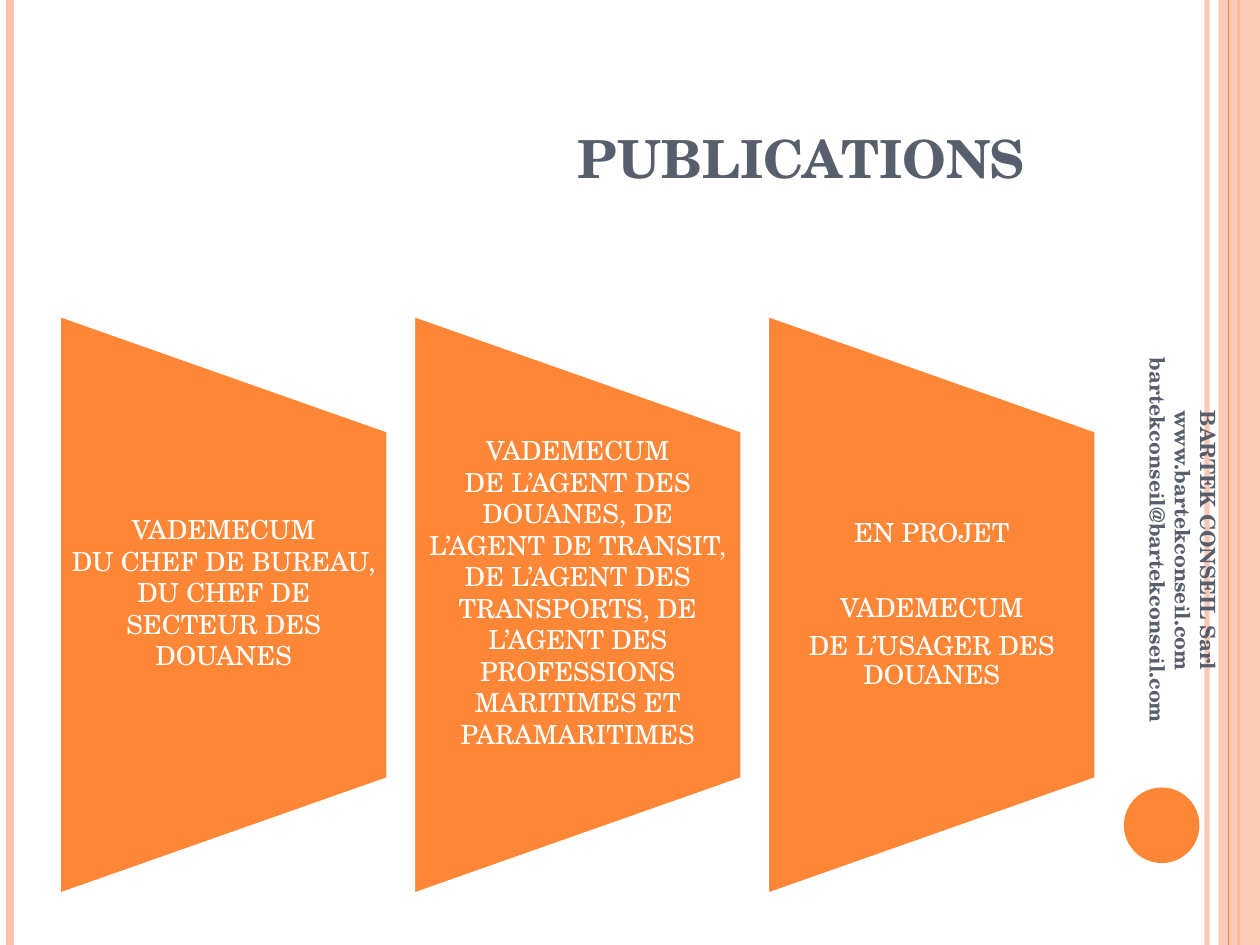
from pptx import Presentation
from pptx.dml.color import RGBColor
from pptx.enum.shapes import MSO_CONNECTOR as Connector, MSO_SHAPE as Shape
from pptx.enum.text import MSO_ANCHOR as Anchor, PP_ALIGN as Align
from pptx.oxml.ns import qn
from pptx.util import Inches, Pt
from lxml.etree import SubElement

FONT = "TeX Gyre Schola"
COLORS = {"orange": "FE8637", "peach": "FEC3AE", "slate": "575F6D", "white": "FFFFFF"}
SLIDE_HEIGHT = 7.5

# Columns: width, step between left edges, vertical middle
COLUMN_LEFT, COLUMN_WIDTH, COLUMN_STEP = 0.47, 2.61, 2.81
COLUMN_MIDDLE, COLUMN_HEIGHT, LABEL_HEIGHT = 4.8, 4.6, 2.76

# Each column: paragraphs as (text, space after in points), line spacing, bottom inset
COLUMNS = [
    ([("VADEMECUM", 0),
      ("DU CHEF DE BUREAU, DU CHEF DE SECTEUR DES DOUANES", 0)], 1, 0.2),
    ([("VADEMECUM", 0),
      ("DE L’AGENT DES DOUANES, DE L’AGENT DE TRANSIT, DE L’AGENT DES TRANSPORTS, "
       "DE L’AGENT DES PROFESSIONS MARITIMES ET PARAMARITIMES", 0)], 1, 0.2),
    ([("EN PROJET", 27), ("VADEMECUM", 5.5), ("DE L’USAGER DES DOUANES", 0)], 0.9, 0),
]


def rgb(name):
    return RGBColor.from_string(COLORS[name])


def set_alpha(element, percent):
    """Make the solid colour inside the element partly transparent."""
    color = element.find(".//" + qn("a:srgbClr"))
    SubElement(color, qn("a:alpha"), val=str(percent * 1000))


def add_rule(slide, x, color, width, alpha=100):
    """Draw a vertical line over the full slide height."""
    rule = slide.shapes.add_connector(
        Connector.STRAIGHT, Inches(x), 0, Inches(x), Inches(SLIDE_HEIGHT))
    rule.line.color.rgb = rgb(color)
    rule.line.width = Pt(width)
    properties = rule._element.spPr
    if alpha < 100:
        set_alpha(properties, alpha)
    SubElement(properties, qn("a:effectLst"))


def add_block(slide, kind, box, color, outline=None, rotation=0, alpha=100):
    shape = slide.shapes.add_shape(kind, *map(Inches, box))
    shape.shadow.inherit = False
    shape.rotation = rotation
    shape.fill.solid()
    shape.fill.fore_color.rgb = rgb(color)
    if alpha < 100:
        set_alpha(shape._element.spPr, alpha)
    if outline:
        shape.line.color.rgb = rgb(outline)
        shape.line.width = Pt(2)
    else:
        shape.line.fill.background()


def add_text(slide, box, paragraphs, size, color, bold=False, anchor=Anchor.MIDDLE,
             rotation=0, spacing=1, top=0.05, bottom=0.05, indent=0):
    """Add centred paragraphs, given as (text, space after) pairs."""
    text_box = slide.shapes.add_textbox(*map(Inches, box))
    text_box.rotation = rotation
    frame = text_box.text_frame
    frame.word_wrap = True
    frame.vertical_anchor = anchor
    frame.margin_top, frame.margin_bottom = Inches(top), Inches(bottom)
    frame.margin_left = Inches(0.1 + indent)
    for index, (text, space_after) in enumerate(paragraphs):
        paragraph = frame.add_paragraph() if index else frame.paragraphs[0]
        paragraph.alignment = Align.CENTER
        paragraph.line_spacing = spacing
        paragraph.space_after = Pt(space_after)
        run = paragraph.add_run()
        run.text = text
        run.font.name = FONT
        run.font.size = Pt(size)
        run.font.bold = bold
        run.font.color.rgb = rgb(color)


def add_column(slide, left, paragraphs, spacing, bottom):
    """Add a trapezoid turned on its side, with its label."""
    center = left + COLUMN_WIDTH / 2
    add_block(slide, Shape.FLOWCHART_MANUAL_OPERATION,
              (center - COLUMN_HEIGHT / 2, COLUMN_MIDDLE - COLUMN_WIDTH / 2,
               COLUMN_HEIGHT, COLUMN_WIDTH),
              "orange", outline="white", rotation=270)
    add_text(slide, (left, COLUMN_MIDDLE - LABEL_HEIGHT / 2, COLUMN_WIDTH, LABEL_HEIGHT),
             paragraphs, 15, "white", spacing=spacing, top=0, bottom=bottom)


def main():
    presentation = Presentation()
    presentation.slide_width, presentation.slide_height = Inches(10), Inches(SLIDE_HEIGHT)
    slide = presentation.slides.add_slide(presentation.slide_layouts[6])

    # Side bands and disc
    add_rule(slide, 9.58, "peach", 3, alpha=93)
    add_rule(slide, 0.08, "peach", 4.5)
    add_rule(slide, 9.83, "orange", 1.5)
    add_block(slide, Shape.RECTANGLE, (9.67, 0, 0.33, SLIDE_HEIGHT), "peach", alpha=87)
    add_rule(slide, 9.75, "orange", 0.75)
    add_block(slide, Shape.OVAL, (8.92, 6.25, 0.6, 0.6), "orange")

    # Title
    add_text(slide, (0.5, 0.3, 8.17, 1.25), [("PUBLICATIONS", 0)], 30, "slate",
             bold=True, anchor=Anchor.BOTTOM, indent=3.55)

    # Publications
    for index, (paragraphs, spacing, bottom) in enumerate(COLUMNS):
        add_column(slide, COLUMN_LEFT + index * COLUMN_STEP, paragraphs, spacing, bottom)

    # Contact details along the right edge
    contact = ["BARTEK CONSEIL Sarl", "www.bartekconseil.com",
               "bartekconseil@bartekconseil.com"]
    add_text(slide, (7.64, 4.09, 3.5, 0.4), [(line, 0) for line in contact], 12, "slate",
             bold=True, rotation=90)

    presentation.save("out.pptx")


if __name__ == "__main__":
    main()
